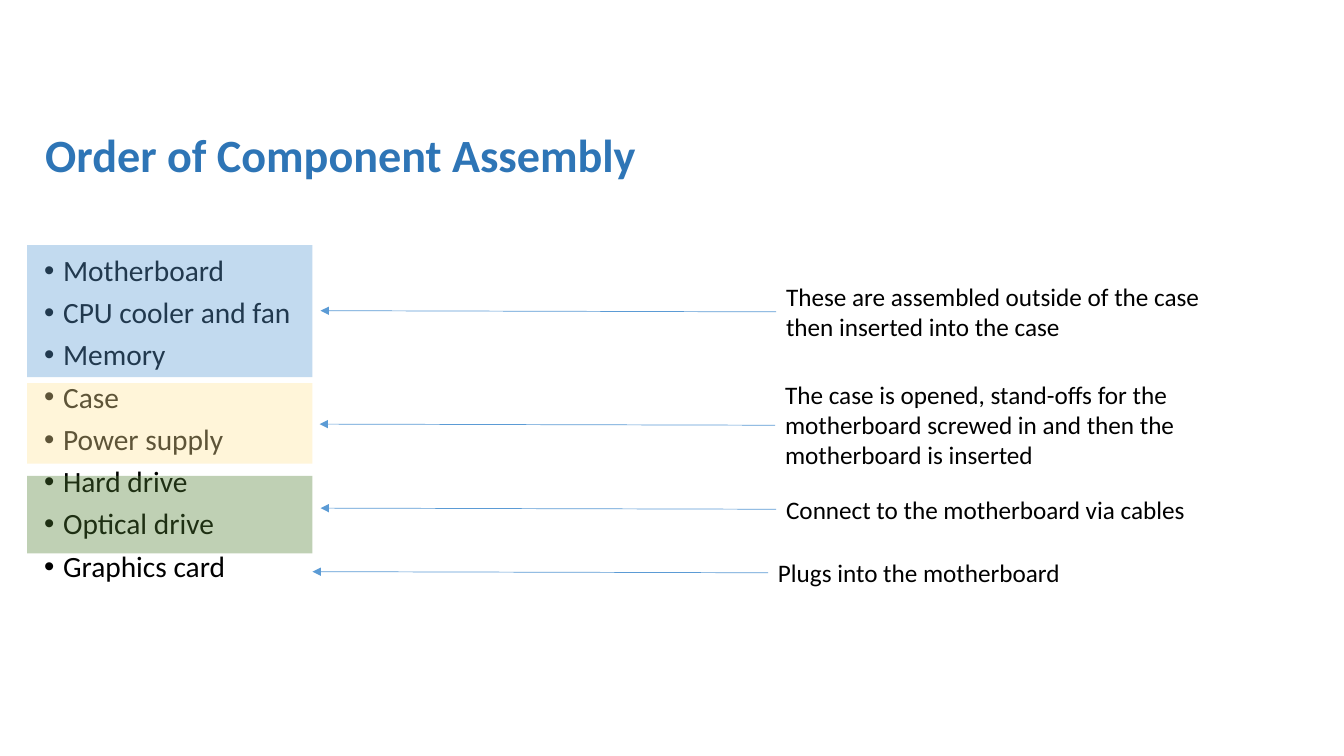
from pptx import Presentation
from pptx.dml.color import RGBColor
from pptx.enum.shapes import MSO_CONNECTOR, MSO_SHAPE
from pptx.enum.text import MSO_ANCHOR, MSO_AUTO_SIZE
from pptx.oxml.ns import qn
from pptx.util import Pt
from lxml.etree import SubElement


def rgb(color):
    return RGBColor.from_string(color)


def add_text(text, x, y, w, h, size=18, color="000000", bold=False, spacing=1.0,
             before=0, bullet=None, indent=0, anchor=MSO_ANCHOR.TOP, grow=False):
    sp = s.shapes.add_textbox(Pt(x), Pt(y), Pt(w), Pt(h))
    tf = sp.text_frame
    tf.word_wrap = True
    tf.vertical_anchor = anchor
    tf.auto_size = MSO_AUTO_SIZE.SHAPE_TO_FIT_TEXT if grow else MSO_AUTO_SIZE.NONE
    for i, line in enumerate(text.split("\n")):
        p = tf.paragraphs[0] if i == 0 else tf.add_paragraph()
        p.line_spacing = spacing
        p.space_before = Pt(before if i else 0)
        if bullet:
            pPr = p._p.get_or_add_pPr()
            pPr.set("marL", str(Pt(indent)))
            pPr.set("indent", str(-Pt(indent)))
            SubElement(pPr, qn("a:buFont"), typeface="Arial")
            SubElement(pPr, qn("a:buChar"), char=bullet)
        r = p.add_run()
        r.text = line
        r.font.name = "Calibri"
        r.font.size = Pt(size)
        r.font.bold = bold
        r.font.color.rgb = rgb(color)
    return sp


prs = Presentation()
prs.slide_width, prs.slide_height = Pt(960), Pt(540)
s = prs.slides.add_slide(prs.slide_layouts[6])

# Title and component list
add_text("Order of Component Assembly", 25.2, 77, 913, 71.3, size=33,
         color="2E75B6", bold=True, spacing=0.9, anchor=MSO_ANCHOR.MIDDLE)
components = ["Motherboard", "CPU cooler and fan", "Memory", "Case",
              "Power supply", "Hard drive", "Optical drive", "Graphics card"]
add_text("\n".join(components), 24.5, 179.3, 913, 324.7, size=21,
         spacing=0.9, before=7.5, bullet="•", indent=13.5)

# Translucent bands over the component groups
for y, h, color in [(175, 94.3, "5B9BD5"), (273.6, 57.6, "FFE699"), (339.9, 55.4, "548235")]:
    band = s.shapes.add_shape(MSO_SHAPE.RECTANGLE, Pt(19.4), Pt(y), Pt(203.8), Pt(h))
    band.shadow.inherit = False
    band.line.fill.background()
    band.fill.solid()
    band.fill.fore_color.rgb = rgb(color)
    clr = band._element.spPr.find(qn("a:solidFill"))[0]
    SubElement(clr, qn("a:alpha"), val="37000")

# Notes, each with an arrow back to its group
notes = [
    ("These are assembled outside of the case\nthen inserted into the case", 554.4, 197.3, 317.5, 50.9),
    ("The case is opened, stand-offs for the motherboard screwed in and then "
     "the motherboard is inserted", 553.7, 267.4, 306, 72.7),
    ("Connect to the motherboard via cables", 554.4, 349.2, 306, 29.1),
    ("Plugs into the motherboard", 548.6, 394.6, 306, 29.1),
]
for text, x, y, w, h in notes:
    note = add_text(text, x, y, w, h, grow=True)
    middle = y + h / 2
    arrow = s.shapes.add_connector(MSO_CONNECTOR.STRAIGHT, Pt(x), Pt(middle),
                                   Pt(x - 325.4), Pt(middle - 0.8))
    arrow.begin_connect(note, 1)
    arrow.line.color.rgb = rgb("5B9BD5")
    arrow.line.width = Pt(0.5)
    SubElement(arrow.line._get_or_add_ln(), qn("a:tailEnd"), type="triangle")
    SubElement(arrow._element.spPr, qn("a:effectLst"))

prs.save("out.pptx")
